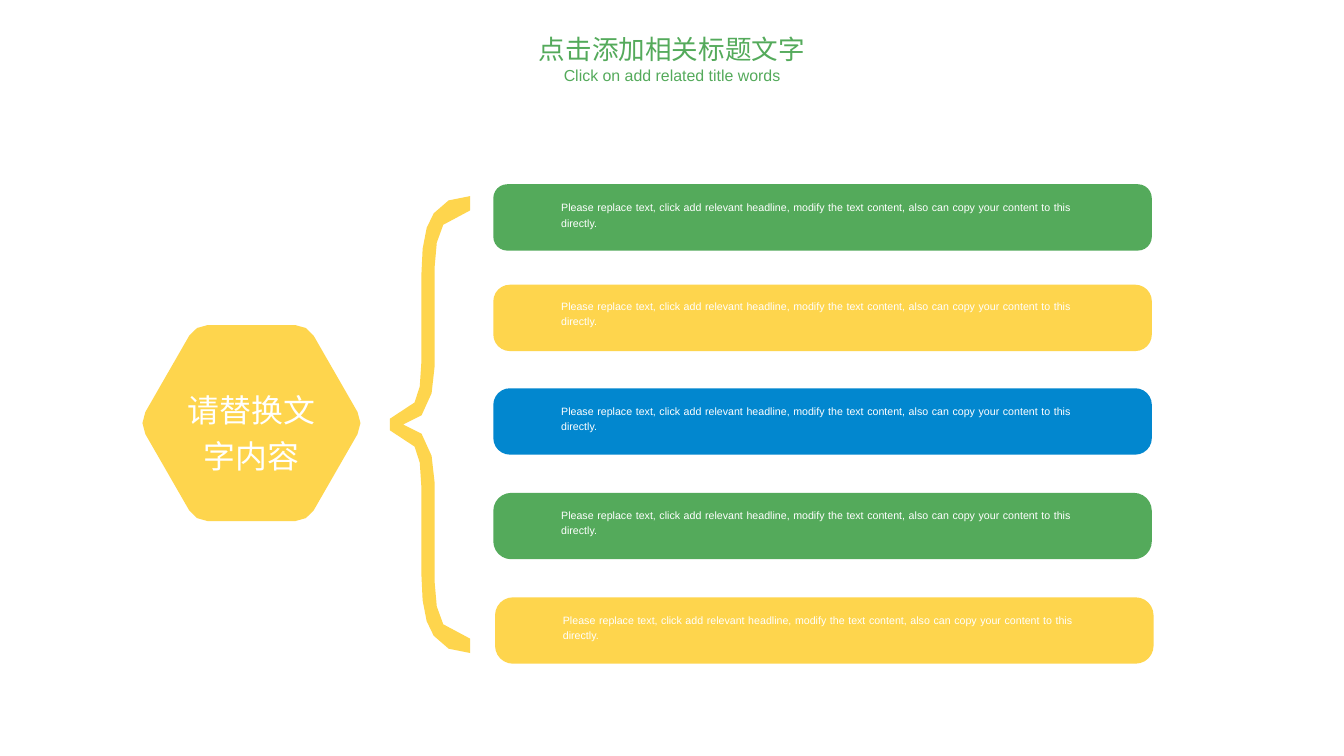
import dataclasses
import math
import typing

import pptx
import pptx.dml.color
import pptx.enum.shapes
import pptx.enum.text
import pptx.util

Pt = pptx.util.Pt
Align = pptx.enum.text.PP_ALIGN
Fit = pptx.enum.text.MSO_AUTO_SIZE
Point = tuple[float, float]

GREEN, YELLOW, BLUE, WHITE = "54AA5B", "FED54D", "0287CF", "FFFFFF"
BAR_WIDTH, BAR_HEIGHT = 496, 50
BAR_TEXT = (
    "Please replace text, click add relevant headline, modify the text content, "
    "also can copy your content to this directly."
)
CHORD_LENGTH = 16


@dataclasses.dataclass(frozen=True)
class Bar:
    left: float
    top: float
    color: str
    rounding: float
    text_offset: float


@dataclasses.dataclass(frozen=True)
class Label:
    text: str
    left: float
    top: float
    width: float
    height: float
    size: float
    color: str
    align: typing.Any
    font: str = "Arial"
    spacing: float = 1.0
    inset_x: float = 0
    inset_y: float = 0
    fit: typing.Any = Fit.SHAPE_TO_FIT_TEXT


BARS = [
    Bar(371.6, 138.8, GREEN, 0.21, 10.9),
    Bar(371.6, 214.5, YELLOW, 0.25, 9.7),
    Bar(371.6, 292.5, BLUE, 0.25, 10.4),
    Bar(371.6, 371.3, GREEN, 0.27, 10.2),
    Bar(372.9, 450, YELLOW, 0.27, 10.5),
]
HEADING = Label("点击添加相关标题文字", 385.5, 20.9, 241.2, 29.5, 20, GREEN, Align.CENTER,
                font="Noto Sans CJK SC", inset_x=7.6, inset_y=3.8, fit=Fit.NONE)
SUBHEADING = Label("Click on add related title words", 414.9, 45.4, 182.9, 29.5, 12, GREEN,
                   Align.CENTER, inset_x=7.6, inset_y=3.8, fit=Fit.NONE)
TOPIC = Label("请替换文字内容", 139, 288.4, 100.8, 67, 24, WHITE, Align.CENTER, spacing=1.2)

HEXAGON_CENTER = (189.4, 318.7)
HEXAGON_QUARTER = [
    (33.1, -73.8),
    (36, -73.8, 38.2, -73.1, 41, -71.6),
    (43.9, -70.2, 45.4, -68, 46.8, -65.9),
    (79.9, -8.3),
    (81.4, -5.4, 82.1, -2.5, 82.1, 0),
]
BRACE_TIP = (293.6, 319.8)
BRACE_HALF = [
    (10.1, 0),
    (27.4, 0, 33.8, -23.8, 33.8, -43.9),
    (33.8, -118.8),
    (33.8, -132.5, 36, -143.3, 40.3, -150.5),
    (43.9, -157.7, 51.1, -161.3, 60.5, -161.3),
    (60.5, -172.1),
    (48.2, -172.1, 38.9, -167.8, 33.1, -159.1),
    (26.6, -150.5, 23.8, -134.6, 23.8, -112.3),
    (23.8, -46.8),
    (23.8, -33.1, 22.3, -22.3, 18.7, -16.6),
    (15.8, -10.1, 9.4, -6.5, 0, -4.3),
]


def rgb(color: str) -> pptx.dml.color.RGBColor:
    return pptx.dml.color.RGBColor.from_string(color)


def apply(target: typing.Any, values: dict[str, typing.Any]) -> None:
    for name, value in values.items():
        setattr(target, name, value)


def paint(shape: typing.Any, color: str) -> None:
    shape.shadow.inherit = False
    shape.fill.solid()
    shape.fill.fore_color.rgb = rgb(color)
    shape.line.fill.background()


def flatten(segments: list[tuple[float, ...]]) -> list[Point]:
    points: list[Point] = []
    for segment in segments:
        if len(segment) == 2:
            points.append(segment)
            continue
        corners = (points[-1], segment[:2], segment[2:4], segment[4:])
        steps = max(1, round(math.dist(corners[0], corners[3]) / CHORD_LENGTH))
        for step in range(1, steps + 1):
            t = step / steps
            u = 1 - t
            weights = (u**3, 3 * u * u * t, 3 * u * t * t, t**3)
            points.append((
                sum(w * c[0] for w, c in zip(weights, corners)),
                sum(w * c[1] for w, c in zip(weights, corners)),
            ))
    return points


def mirrored(points: list[Point], flip_x: int, flip_y: int) -> list[Point]:
    reflection = [(x * flip_x, y * flip_y) for x, y in reversed(points)]
    return points + [point for point in reflection if point not in points]


def draw_outline(shapes: typing.Any, origin: Point, points: list[Point], color: str) -> None:
    placed = [(Pt(origin[0] + x), Pt(origin[1] + y)) for x, y in points]
    builder = shapes.build_freeform(*placed[0], scale=1.0)
    builder.add_line_segments(placed[1:], close=True)
    paint(builder.convert_to_shape(), color)


def draw_bar(shapes: typing.Any, bar: Bar) -> None:
    panel = shapes.add_shape(
        pptx.enum.shapes.MSO_SHAPE.ROUNDED_RECTANGLE,
        Pt(bar.left), Pt(bar.top), Pt(BAR_WIDTH), Pt(BAR_HEIGHT),
    )
    panel.adjustments[0] = bar.rounding
    paint(panel, bar.color)
    draw_label(shapes, Label(BAR_TEXT, bar.left + 51.1, bar.top + bar.text_offset, 384.5, 22.3,
                             8, WHITE, Align.JUSTIFY, spacing=1.2))


def fill_label(holder: typing.Any, label: Label) -> None:
    apply(holder, {"left": Pt(label.left), "top": Pt(label.top),
                   "width": Pt(label.width), "height": Pt(label.height)})
    frame = holder.text_frame
    frame.text = label.text
    apply(frame, {
        "word_wrap": True, "auto_size": label.fit,
        "vertical_anchor": pptx.enum.text.MSO_ANCHOR.TOP,
        "margin_left": Pt(label.inset_x), "margin_right": Pt(label.inset_x),
        "margin_top": Pt(label.inset_y), "margin_bottom": Pt(label.inset_y),
    })
    paragraph = frame.paragraphs[0]
    apply(paragraph, {"alignment": label.align, "line_spacing": label.spacing})
    font = paragraph.runs[0].font
    apply(font, {"name": label.font, "size": Pt(label.size)})
    font.color.rgb = rgb(label.color)


def draw_label(shapes: typing.Any, label: Label) -> None:
    fill_label(shapes.add_textbox(0, 0, 0, 0), label)


def main() -> None:
    deck = pptx.Presentation()
    apply(deck, {"slide_width": Pt(1012.32), "slide_height": Pt(569.52)})
    slide = deck.slides.add_slide(deck.slide_layouts[5])
    shapes = slide.shapes

    fill_label(shapes.title, HEADING)
    draw_label(shapes, SUBHEADING)

    hexagon_right = mirrored(flatten(HEXAGON_QUARTER), 1, -1)
    draw_outline(shapes, HEXAGON_CENTER, mirrored(hexagon_right, -1, 1), YELLOW)
    draw_label(shapes, TOPIC)
    draw_outline(shapes, BRACE_TIP, mirrored(flatten(BRACE_HALF), 1, -1), YELLOW)

    for bar in BARS:
        draw_bar(shapes, bar)

    deck.save("out.pptx")


if __name__ == "__main__":
    main()
